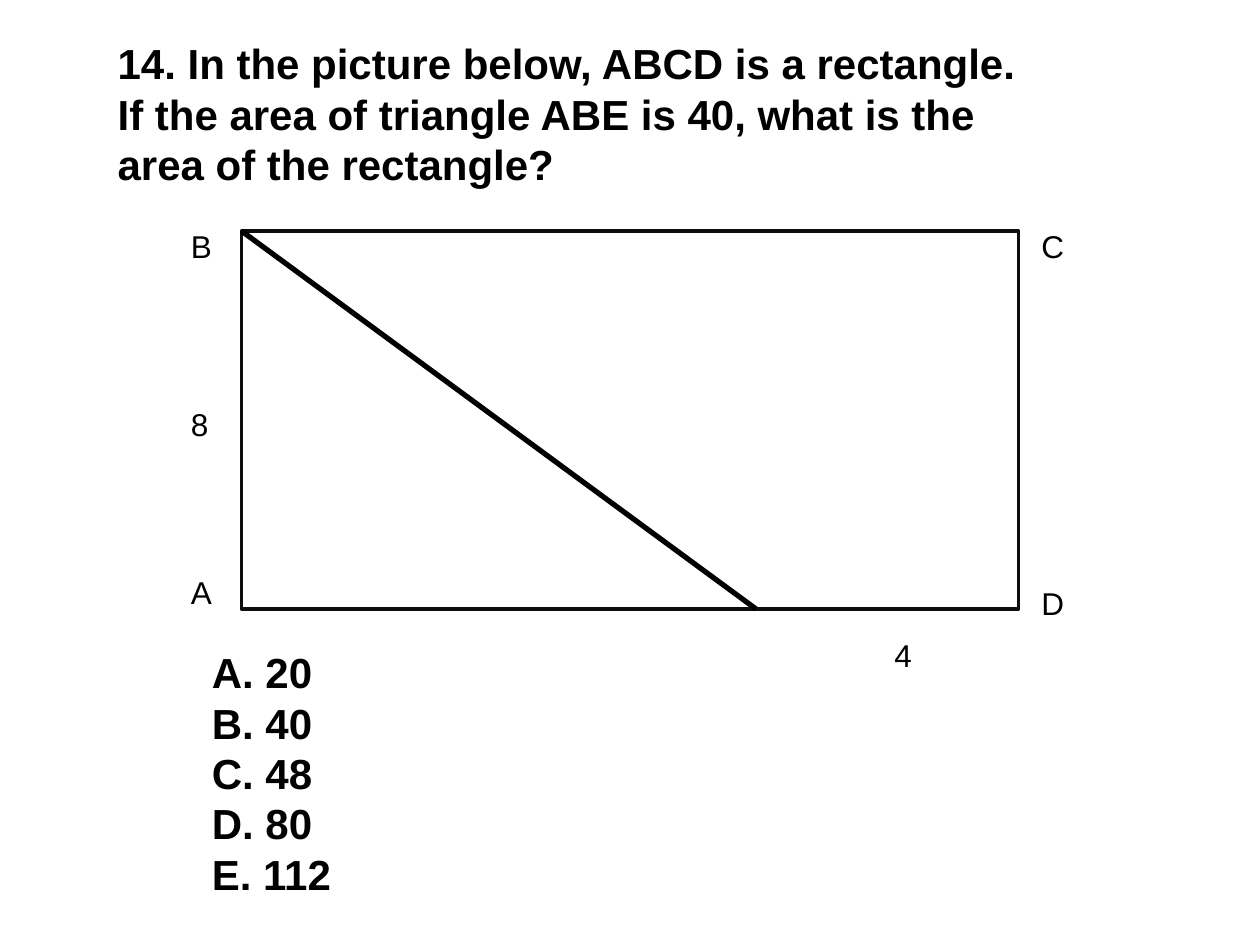
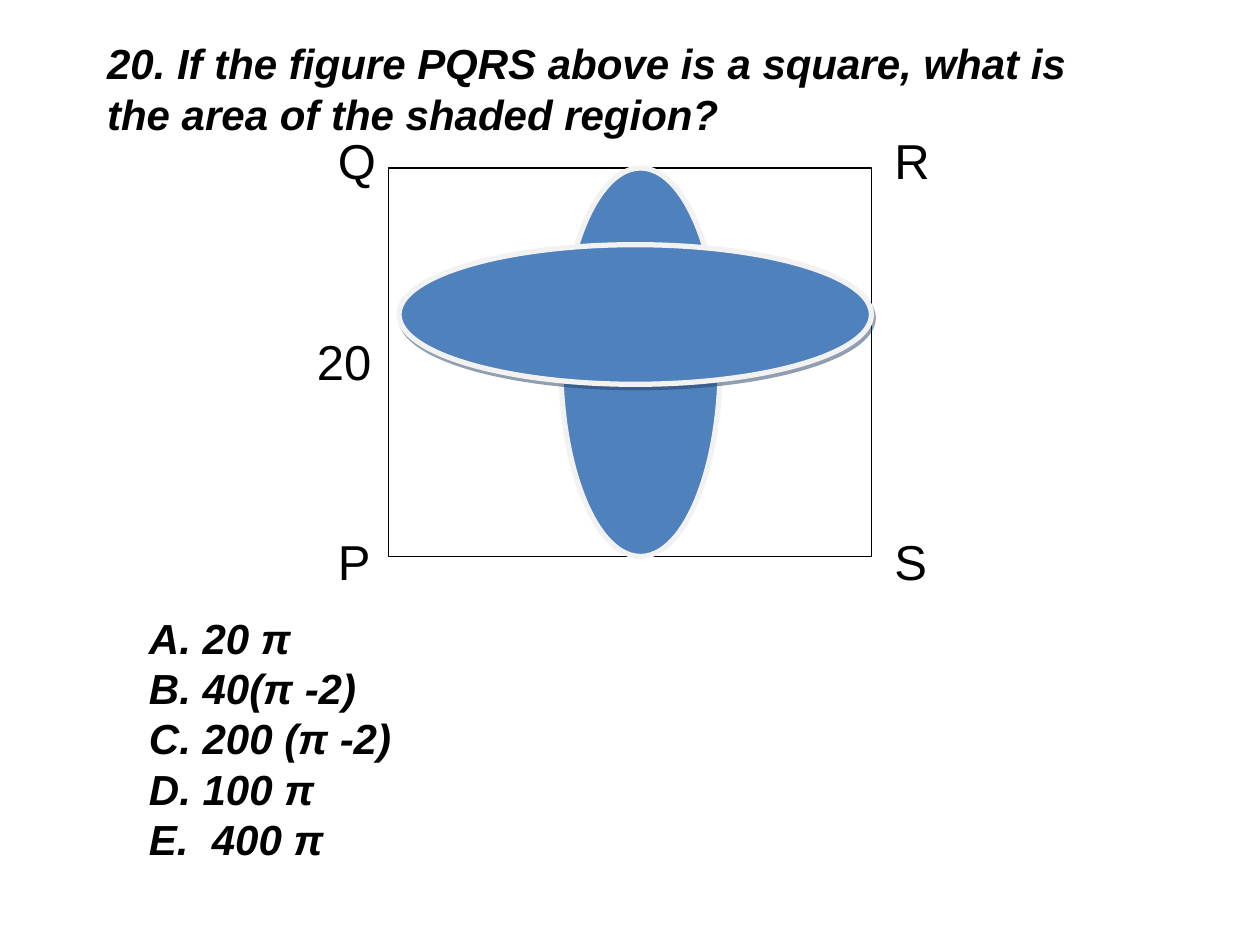
from lxml import etree
from pptx import Presentation
from pptx.dml.color import RGBColor
from pptx.enum.shapes import MSO_CONNECTOR, MSO_SHAPE
from pptx.enum.text import MSO_ANCHOR, MSO_AUTO_SIZE, PP_ALIGN
from pptx.oxml.ns import qn
from pptx.util import Inches, Pt

RECTANGLE = MSO_SHAPE.RECTANGLE
ELLIPSE = MSO_SHAPE.OVAL
STRAIGHT = MSO_CONNECTOR.STRAIGHT
TOP = MSO_ANCHOR.TOP
LEFT = PP_ALIGN.LEFT
NO_AUTOFIT = MSO_AUTO_SIZE.NONE

BLACK = RGBColor(0x00, 0x00, 0x00)
NEAR_BLACK = RGBColor(0x0D, 0x0D, 0x0D)
WHITE = RGBColor(0xFF, 0xFF, 0xFF)
PALE_GREY = RGBColor(0xF2, 0xF2, 0xF2)
BLUE = RGBColor(0x4F, 0x81, 0xBD)
SHADOW_BLUE = RGBColor(0x24, 0x3F, 0x60)

FONT = "Arial"
QUESTION_SIZE = 24
SLIDE_WIDTH = Inches(10)
SLIDE_HEIGHT = Inches(7.5)
COLUMNS = 120
CELL = SLIDE_WIDTH / COLUMNS
TITLE_ONLY = 5


def cells(*counts):
    return [round(count * CELL) for count in counts]


def write_text(shape, lines, size, bold=False, italic=False):
    frame = shape.text_frame
    frame.text = "\n".join(lines)
    frame.word_wrap = True
    frame.auto_size = NO_AUTOFIT
    frame.vertical_anchor = TOP
    for paragraph in frame.paragraphs:
        paragraph.alignment = LEFT
        font = paragraph.font
        font.name = FONT
        font.size = Pt(size)
        font.bold = bold
        font.italic = italic
        font.color.rgb = BLACK


def add_text(slide, box, lines, size, **style):
    write_text(slide.shapes.add_textbox(*cells(*box)), lines, size, **style)


def add_labels(slide, labels, size, width, height):
    for text, column, row in labels:
        add_text(slide, (column, row, width, height), [text], size)


def add_question(presentation, question, question_box, answers, answer_box, italic=False):
    slide = presentation.slides.add_slide(presentation.slide_layouts[TITLE_ONLY])
    title = slide.shapes.title
    title.left, title.top, title.width, title.height = cells(*question_box)
    write_text(title, [question], QUESTION_SIZE, bold=True, italic=italic)
    add_text(slide, answer_box, answers, QUESTION_SIZE, bold=True, italic=italic)
    return slide


def add_figure(slide, kind, box, line_color, line_width, fill=None):
    shape = slide.shapes.add_shape(kind, *cells(*box))
    shape.shadow.inherit = False
    if fill is None:
        shape.fill.background()
    else:
        shape.fill.solid()
        shape.fill.fore_color.rgb = fill
    shape.line.color.rgb = line_color
    shape.line.width = Pt(line_width)
    return shape


def add_segment(slide, ends, color, width):
    connector = slide.shapes.add_connector(STRAIGHT, *cells(*ends))
    connector.line.color.rgb = color
    connector.line.width = Pt(width)
    etree.SubElement(connector._element.spPr, qn("a:effectLst"))


def cast_shadow(shape, color, distance, degrees, opacity):
    effects = shape._element.spPr.find(qn("a:effectLst"))
    shadow = etree.SubElement(
        effects, qn("a:outerShdw"), dist=str(Pt(distance)),
        dir=str(degrees * 60000), algn="ctr", rotWithShape="0")
    tint = etree.SubElement(shadow, qn("a:srgbClr"), val=str(color))
    etree.SubElement(tint, qn("a:alpha"), val=str(opacity * 1000))


def add_rectangle_question(presentation):
    slide = add_question(
        presentation,
        "14. In the picture below, ABCD is a rectangle. "
        "If the area of triangle ABE is 40, what is the area of the rectangle?",
        (10, 3, 90, 15.7),
        ["A. 20", "B. 40", "C. 48", "D. 80", "E. 112"],
        (19, 61, 18, 25.5))
    left, top, width, height = 23, 22, 74, 36
    add_figure(slide, RECTANGLE, (left, top, width, height), NEAR_BLACK, 2)
    add_segment(slide, (left, top, 72, top + height), BLACK, 3)
    add_labels(slide, [
        ("8", 17, 38), ("4", 84, 60), ("B", 17, 21),
        ("A", 17, 54), ("C", 98, 21), ("D", 98, 55),
    ], 18, 5, 5)


def add_square_question(presentation):
    slide = add_question(
        presentation,
        "20. If the figure PQRS above is a square, what is the area of the shaded region?",
        (9, 3, 94, 14.5),
        ["A. 20 π", "B. 40(π -2)", "C. 200 (π -2)", "D. 100 π", "E.  400 π"],
        (13, 57.7, 26, 30),
        italic=True)
    top, height = 16, 37
    add_figure(slide, RECTANGLE, (37, top, 46, height), BLACK, 0.75, WHITE)
    add_figure(slide, ELLIPSE, (53.4, top, 15.2, height), PALE_GREY, 3, BLUE)
    wide_ellipse = add_figure(slide, ELLIPSE, (38, 23.3, 45, 13.3), PALE_GREY, 3, BLUE)
    cast_shadow(wide_ellipse, SHADOW_BLUE, 2.2, 63, 50)
    add_labels(slide, [
        ("Q", 31, 11.8), ("R", 84, 11.8), ("20", 29, 31),
        ("P", 31, 50), ("S", 84, 50),
    ], 28, 8, 6.8)


def main():
    presentation = Presentation()
    presentation.slide_width = SLIDE_WIDTH
    presentation.slide_height = SLIDE_HEIGHT
    add_rectangle_question(presentation)
    add_square_question(presentation)
    presentation.save("out.pptx")


if __name__ == "__main__":
    main()
